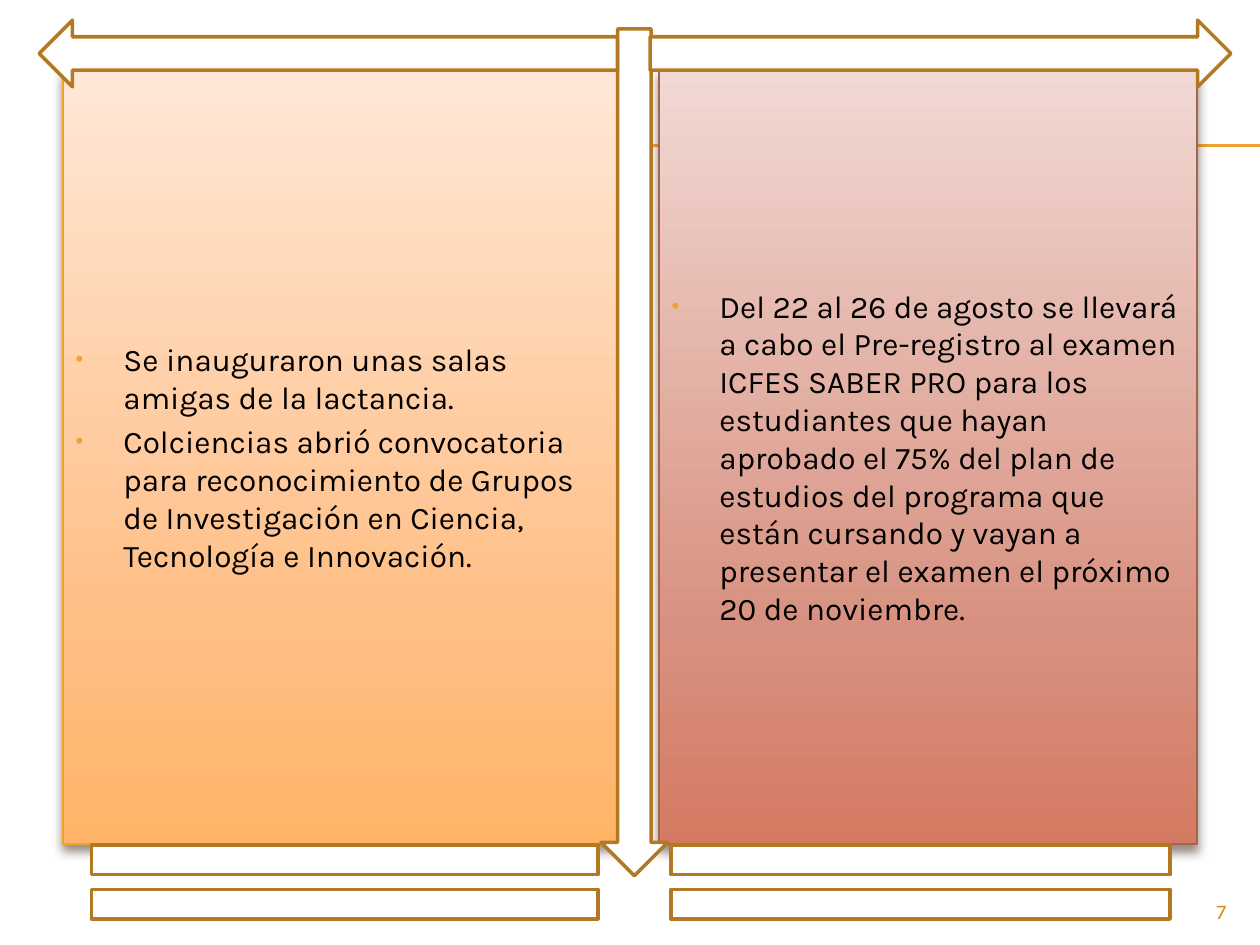
from pptx import Presentation
from pptx import util as u
from pptx.dml.color import RGBColor
from pptx.enum import shapes, text
from pptx.oxml import parse_xml
from pptx.oxml.ns import nsdecls, qn
from lxml import etree

COLORS = {
    "white": "FFFFFF", "black": "000000", "rule": "F0A22E", "outline": "B27822",
    "number": "D48F29", "shadow": "4E3B30", "clay": "A5644E",
}
ORANGE_STOPS = ((0, "FFE7D7"), (72, "FFBE84"), (100, "FFB468"))
CLAY_STOPS = ((0, "F1D9D4"), (72, "D89180"), (100, "D47A62"))
FONT = "Karla"

LEFT_NEWS = [
    "Se inauguraron unas salas amigas de la lactancia.",
    "Colciencias abrió convocatoria para reconocimiento de Grupos de "
    "Investigación en Ciencia, Tecnología e Innovación.",
]
RIGHT_NEWS = [
    "Del 22 al 26 de agosto se llevará a cabo el Pre-registro al examen "
    "ICFES SABER PRO para los estudiantes que hayan aprobado el 75% del plan "
    "de estudios del programa que están cursando y vayan a presentar el "
    "examen el próximo 20 de noviembre.",
]


def rgb(name):
    return RGBColor.from_string(COLORS[name])


def inches(box):
    return [u.Inches(value) for value in box]


def add_run(paragraph, words, size, color):
    run = paragraph.add_run()
    run.text = words
    run.font.name = FONT
    run.font.size = u.Pt(size)
    run.font.color.rgb = rgb(color)


def set_bullet(paragraph):
    properties = paragraph._p.get_or_add_pPr()
    properties.set("marL", str(u.Inches(0.38)))
    properties.set("indent", str(-u.Inches(0.38)))
    color = etree.SubElement(properties, qn("a:buClr"))
    etree.SubElement(color, qn("a:srgbClr"), val=COLORS["rule"])
    etree.SubElement(properties, qn("a:buSzPct"), val="70000")
    etree.SubElement(properties, qn("a:buFont"), typeface="Arial")
    etree.SubElement(properties, qn("a:buChar"), char="•")


def style_panel(panel, stops, line):
    stop_list = "".join(
        f'<a:gs pos="{place * 1000}"><a:srgbClr val="{color}"/></a:gs>'
        for place, color in stops)
    properties = panel._element.spPr
    properties.append(parse_xml(
        f'<a:prstGeom {nsdecls("a")} prst="rect"><a:avLst/></a:prstGeom>'))
    properties.append(parse_xml(
        f'<a:gradFill {nsdecls("a")} rotWithShape="1"><a:gsLst>{stop_list}</a:gsLst>'
        '<a:lin ang="5400000" scaled="0"/></a:gradFill>'))
    panel.line.color.rgb = rgb(line)
    panel.line.width = u.Pt(0.79)
    properties.append(parse_xml(
        f'<a:effectLst {nsdecls("a")}><a:outerShdw blurRad="{u.Pt(6)}" '
        f'dist="{u.Pt(4)}" dir="5400000" rotWithShape="0">'
        f'<a:srgbClr val="{COLORS["shadow"]}"><a:alpha val="60000"/></a:srgbClr>'
        '</a:outerShdw></a:effectLst>'))


def fill_panel(panel, box, news, stops, line):
    panel.left, panel.top, panel.width, panel.height = inches(box)
    style_panel(panel, stops, line)
    frame = panel.text_frame
    frame.word_wrap = True
    frame.auto_size = text.MSO_AUTO_SIZE.NONE
    frame.vertical_anchor = text.MSO_ANCHOR.MIDDLE
    for index, item in enumerate(news):
        paragraph = frame.add_paragraph() if index else frame.paragraphs[0]
        set_bullet(paragraph)
        paragraph.space_before = u.Pt(3.6 if index else 0)
        add_run(paragraph, item, 18, "black")


def add_header_rules(slide, left, right, heights):
    for height in heights:
        rule = slide.shapes.add_connector(
            shapes.MSO_CONNECTOR.STRAIGHT, *inches((left, height, right, height)))
        rule.line.color.rgb = rgb("rule")
        rule.line.width = u.Pt(0.75)
        etree.SubElement(rule._element.spPr, qn("a:effectLst"))
        slide.shapes._spTree.insert(2, rule._element)


def add_frame(slide):
    kinds = shapes.MSO_SHAPE
    for kind, box in (
        (kinds.DOWN_ARROW, (4.77, 0.23, 0.53, 6.72)),
        (kinds.RIGHT_ARROW, (5.16, 0.16, 4.61, 0.53)),
        (kinds.LEFT_ARROW, (0.31, 0.16, 4.59, 0.53)),
        (kinds.MATH_EQUAL, (0, 6.5, 5.47, 1)),
        (kinds.MATH_EQUAL, (4.61, 6.5, 5.39, 1)),
    ):
        outline = slide.shapes.add_shape(kind, *inches(box))
        outline.shadow.inherit = False
        outline.fill.solid()
        outline.fill.fore_color.rgb = rgb("white")
        outline.line.color.rgb = rgb("outline")
        outline.line.width = u.Pt(2)


def add_page_number(slide, box, number):
    frame = slide.shapes.add_textbox(*inches(box)).text_frame
    frame.word_wrap = True
    frame.paragraphs[0].alignment = text.PP_ALIGN.RIGHT
    add_run(frame.paragraphs[0], number, 12, "number")


def main():
    deck = Presentation()
    deck.slide_width, deck.slide_height = inches((10, 7.5))
    slide = deck.slides.add_slide(deck.slide_layouts[3])
    title, left_panel, right_panel = slide.placeholders
    title._element.getparent().remove(title._element)

    add_header_rules(slide, 0.56, 10, (1.15, 1.16))
    fill_panel(left_panel, (0.5, 0.55, 4.42, 6.15), LEFT_NEWS, ORANGE_STOPS, "rule")
    fill_panel(right_panel, (5.23, 0.55, 4.27, 6.15), RIGHT_NEWS, CLAY_STOPS, "clay")
    add_frame(slide)
    add_page_number(slide, (9, 7.08, 0.83, 0.27), "7")
    deck.save("out.pptx")


if __name__ == "__main__":
    main()
